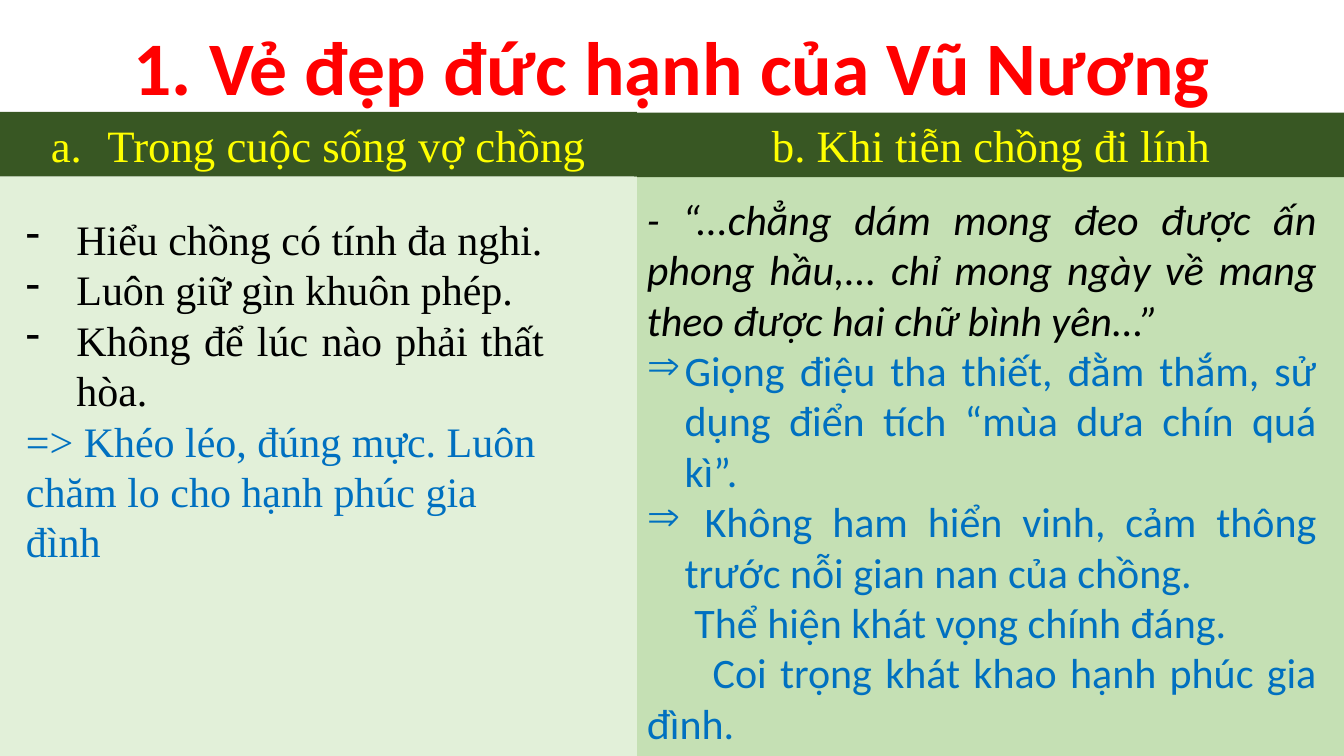
from dataclasses import dataclass

import pptx
import pptx.dml.color
import pptx.enum.shapes
import pptx.enum.text
import pptx.oxml
import pptx.oxml.ns
import pptx.util

Pt = pptx.util.Pt
Align = pptx.enum.text.PP_ALIGN
Anchor = pptx.enum.text.MSO_ANCHOR


@dataclass(frozen=True)
class Theme:
    """Colours, fonts and type sizes of the slide."""
    white: str = "FFFFFF"
    red: str = "FF0000"
    yellow: str = "FFFF00"
    black: str = "000000"
    blue: str = "0070C0"
    dark_green: str = "385723"
    pale_green: str = "E2F0D9"
    mid_green: str = "C5E0B4"
    sans: str = "Calibri"
    serif: str = "Times New Roman"
    title_size: int = 54
    heading_size: int = 32
    body_size: int = 30


@dataclass(frozen=True)
class Line:
    """One paragraph with its look, hanging indent and bullet."""
    text: str
    color: str
    align: int = Align.JUSTIFY
    italic: bool = False
    margin: float = 0
    indent: float = 0
    bullet: str = ""


THEME = Theme()
HEADING_HEIGHT = 46
VIRTUE_POINTS = [
    Line("Hiểu chồng có tính đa nghi.", THEME.black, Align.LEFT, False, 36, -36, "-"),
    Line("Luôn giữ gìn khuôn phép.", THEME.black, Align.LEFT, False, 36, -36, "-"),
    Line("Không để lúc nào phải thất hòa.", THEME.black, Align.JUSTIFY, False, 36, -36, "-"),
    Line("=> Khéo léo, đúng mực. Luôn chăm lo cho hạnh phúc gia đình", THEME.blue, Align.LEFT),
]
FAREWELL_POINTS = [
    Line("- “...chẳng dám mong đeo được ấn phong hầu,... chỉ mong ngày về mang "
         "theo được hai chữ bình yên...”", THEME.black, italic=True),
    Line("Giọng điệu tha thiết, đằm thắm, sử dụng điển tích “mùa dưa chín quá kì”.",
         THEME.blue, margin=27, indent=-27, bullet="⇒"),
    Line(" Không ham hiển vinh, cảm thông trước nỗi gian nan của chồng.",
         THEME.blue, margin=27, indent=-27, bullet="⇒"),
    Line("Thể hiện khát vọng chính đáng.", THEME.blue, indent=34),
    Line("Coi trọng khát khao hạnh phúc gia đình.", THEME.blue, indent=47),
]


def rgb(color):
    """Turn a hex string into a colour."""
    return pptx.dml.color.RGBColor.from_string(color)


def set_bullet(paragraph, margin, indent, tag="buNone", **attributes):
    """Give a paragraph its indents and its bullet or number."""
    properties = paragraph._p.get_or_add_pPr()
    properties.set("marL", str(Pt(margin)))
    properties.set("indent", str(Pt(indent)))
    mark = pptx.oxml.parse_xml(f'<a:{tag} {pptx.oxml.ns.nsdecls("a")}/>')
    for name, value in attributes.items():
        mark.set(name, value)
    properties.append(mark)


def style(paragraph, font_name, size, color, align):
    """Set the font and alignment of a paragraph."""
    paragraph.alignment = align
    paragraph.font.name = font_name
    paragraph.font.size = Pt(size)
    paragraph.font.color.rgb = rgb(color)


def add_panel(slide, box, color):
    """Draw a plain filled rectangle."""
    panel = slide.shapes.add_shape(
        pptx.enum.shapes.MSO_SHAPE.RECTANGLE, *map(Pt, box))
    panel.shadow.inherit = False
    panel.fill.solid()
    panel.fill.fore_color.rgb = rgb(color)
    panel.line.fill.background()
    return panel


def add_title(slide, box, text):
    """Place and format the title placeholder."""
    title = slide.shapes.title
    title.left, title.top, title.width, title.height = map(Pt, box)
    title.fill.solid()
    title.fill.fore_color.rgb = rgb(THEME.white)
    frame = title.text_frame
    frame.text = text
    frame.auto_size = pptx.enum.text.MSO_AUTO_SIZE.NONE
    frame.vertical_anchor = Anchor.MIDDLE
    heading = frame.paragraphs[0]
    style(heading, THEME.sans, THEME.title_size, THEME.red, Align.CENTER)
    heading.font.bold = True
    heading.line_spacing = 1.0


def add_points(slide, box, lines, font_name):
    """Write the paragraphs of a column."""
    frame = slide.shapes.add_textbox(*map(Pt, box)).text_frame
    frame.word_wrap = True
    for index, line in enumerate(lines):
        point = frame.paragraphs[0] if index == 0 else frame.add_paragraph()
        point.text = line.text
        style(point, font_name, THEME.body_size, line.color, line.align)
        point.font.italic = line.italic
        if line.bullet:
            set_bullet(point, line.margin, line.indent, "buChar", char=line.bullet)
        else:
            set_bullet(point, line.margin, line.indent)


def add_column(slide, box, heading, fill, lines, font_name, inset, numbered=False):
    """Draw a column: heading bar, coloured body and its points."""
    left, top, width, height = box
    body_top = top + HEADING_HEIGHT
    add_panel(slide, (left, body_top, width, height - HEADING_HEIGHT), fill)
    frame = add_panel(slide, (left, top, width, HEADING_HEIGHT), THEME.dark_green).text_frame
    frame.word_wrap = True
    frame.vertical_anchor = Anchor.MIDDLE
    caption = frame.paragraphs[0]
    caption.text = heading
    style(caption, THEME.serif, THEME.heading_size, THEME.yellow, Align.CENTER)
    if numbered:
        set_bullet(caption, 40.5, -40.5, "buAutoNum", type="alphaLcPeriod")
    inset_left, inset_top, inset_right = inset
    points_top = body_top + inset_top
    add_points(slide, (left + inset_left, points_top, width - inset_left - inset_right,
                       top + height - points_top), lines, font_name)


def main():
    """Build the slide and save it."""
    deck = pptx.Presentation()
    deck.slide_width, deck.slide_height = Pt(960), Pt(540)
    slide = deck.slides.add_slide(deck.slide_layouts[5])
    add_title(slide, (0, 10, 960, 73), "1. Vẻ đẹp đức hạnh của Vũ Nương")
    add_column(slide, (453, 80.5, 510, 459.5), "b. Khi tiễn chồng đi lính",
               THEME.mid_green, FAREWELL_POINTS, THEME.sans, (2, 8, 15))
    add_column(slide, (-0.5, 80, 455.5, 460), "Trong cuộc sống vợ chồng",
               THEME.pale_green, VIRTUE_POINTS, THEME.serif, (12, 23, 59), numbered=True)
    deck.save("out.pptx")


if __name__ == "__main__":
    main()
